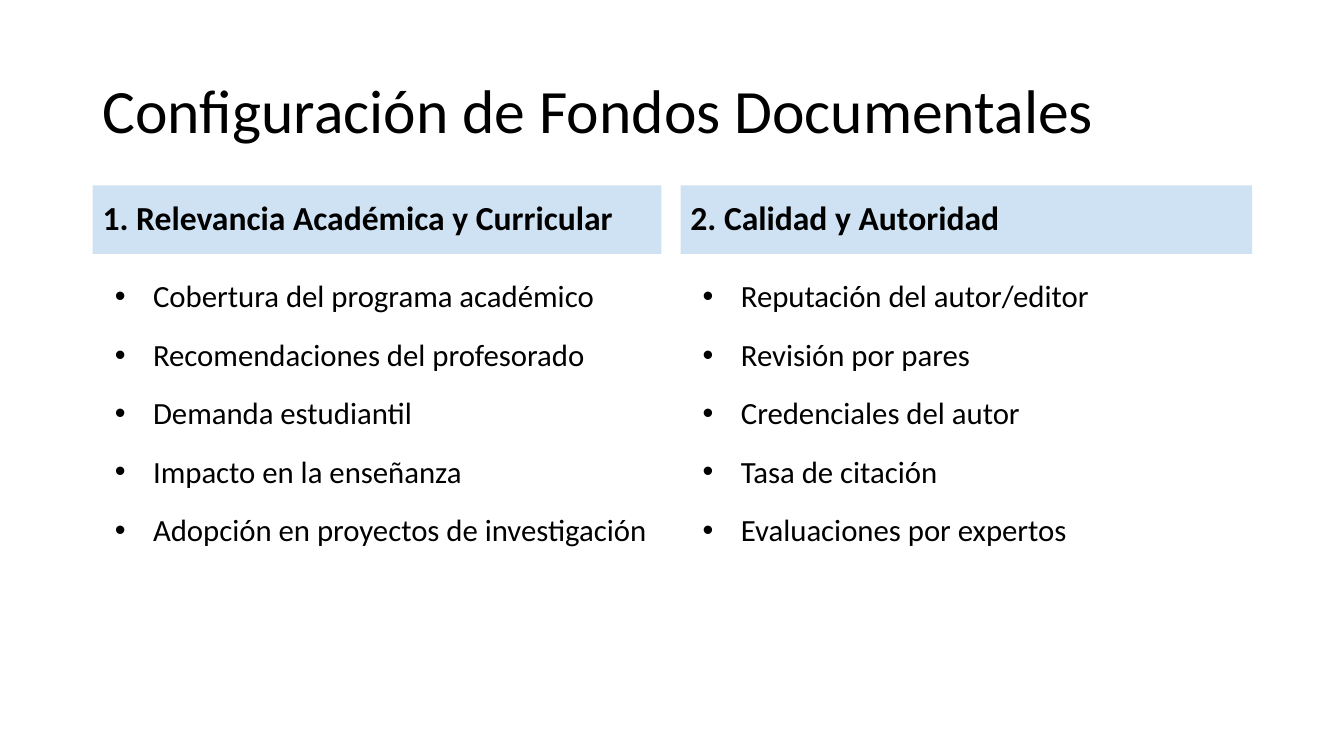
from lxml.etree import SubElement
from pptx import Presentation
from pptx.dml.color import RGBColor
from pptx.enum.shapes import MSO_SHAPE
from pptx.enum.text import MSO_ANCHOR, PP_ALIGN
from pptx.oxml.ns import qn
from pptx.util import Inches, Pt

BLACK = RGBColor(0x00, 0x00, 0x00)
PALE_BLUE = RGBColor(0xCF, 0xE2, 0xF3)
FONT = "Calibri"

# Grid: (left, width) of each column, (top, height) of each row, in inches
COLUMNS = [(0.92, 5.64), (6.75, 5.67)]
TITLE_ROW, HEADING_ROW, LIST_ROW = (0.4, 1.45), (1.84, 0.68), (2.74, 4.03)
TITLE_WIDTH = 11.5

CRITERIA = [
    ("1. Relevancia Académica y Curricular", [
        "Cobertura del programa académico",
        "Recomendaciones del profesorado",
        "Demanda estudiantil",
        "Impacto en la enseñanza",
        "Adopción en proyectos de investigación",
    ]),
    ("2. Calidad y Autoridad", [
        "Reputación del autor/editor",
        "Revisión por pares",
        "Credenciales del autor",
        "Tasa de citación",
        "Evaluaciones por expertos",
    ]),
]


def place(column, row):
    """Return left, top, width and height of a grid cell."""
    return [Inches(value) for value in (column[0], row[0], column[1], row[1])]


def write(para, text, size, bold=False):
    """Add one run in the slide's common text style."""
    para.alignment = PP_ALIGN.LEFT
    para.line_spacing = 0.9
    span = para.add_run()
    span.text = text
    span.font.name = FONT
    span.font.size = Pt(size)
    span.font.bold = bold
    span.font.color.rgb = BLACK


deck = Presentation()
deck.slide_width, deck.slide_height = Inches(13.33), Inches(7.5)
page = deck.slides.add_slide(deck.slide_layouts[6])

# Title
title = page.shapes.add_textbox(*place((COLUMNS[0][0], TITLE_WIDTH), TITLE_ROW))
title.text_frame.word_wrap = True
title.text_frame.vertical_anchor = MSO_ANCHOR.MIDDLE
write(title.text_frame.paragraphs[0], "Configuración de Fondos Documentales", 44)

for column, (heading, items) in zip(COLUMNS, CRITERIA):
    # Heading band
    band = page.shapes.add_shape(MSO_SHAPE.RECTANGLE, *place(column, HEADING_ROW))
    band.shadow.inherit = False
    band.fill.solid()
    band.fill.fore_color.rgb = PALE_BLUE
    band.line.fill.background()
    band.text_frame.word_wrap = True
    band.text_frame.vertical_anchor = MSO_ANCHOR.MIDDLE
    write(band.text_frame.paragraphs[0], heading, 24, bold=True)

    # Bulleted list
    box = page.shapes.add_textbox(*place(column, LIST_ROW))
    box.text_frame.word_wrap = True
    for index, item in enumerate(items):
        para = box.text_frame.add_paragraph() if index else box.text_frame.paragraphs[0]
        properties = para._p.get_or_add_pPr()
        properties.set("marL", str(Inches(0.5)))
        properties.set("indent", str(Inches(-0.38)))
        bullet_color = SubElement(properties, qn("a:buClr"))
        SubElement(bullet_color, qn("a:srgbClr"), val=str(BLACK))
        SubElement(properties, qn("a:buFont"), typeface="Arial")
        SubElement(properties, qn("a:buChar"), char="•")
        if index:
            para.space_before = Pt(18)
        write(para, item, 22)

deck.save("out.pptx")
